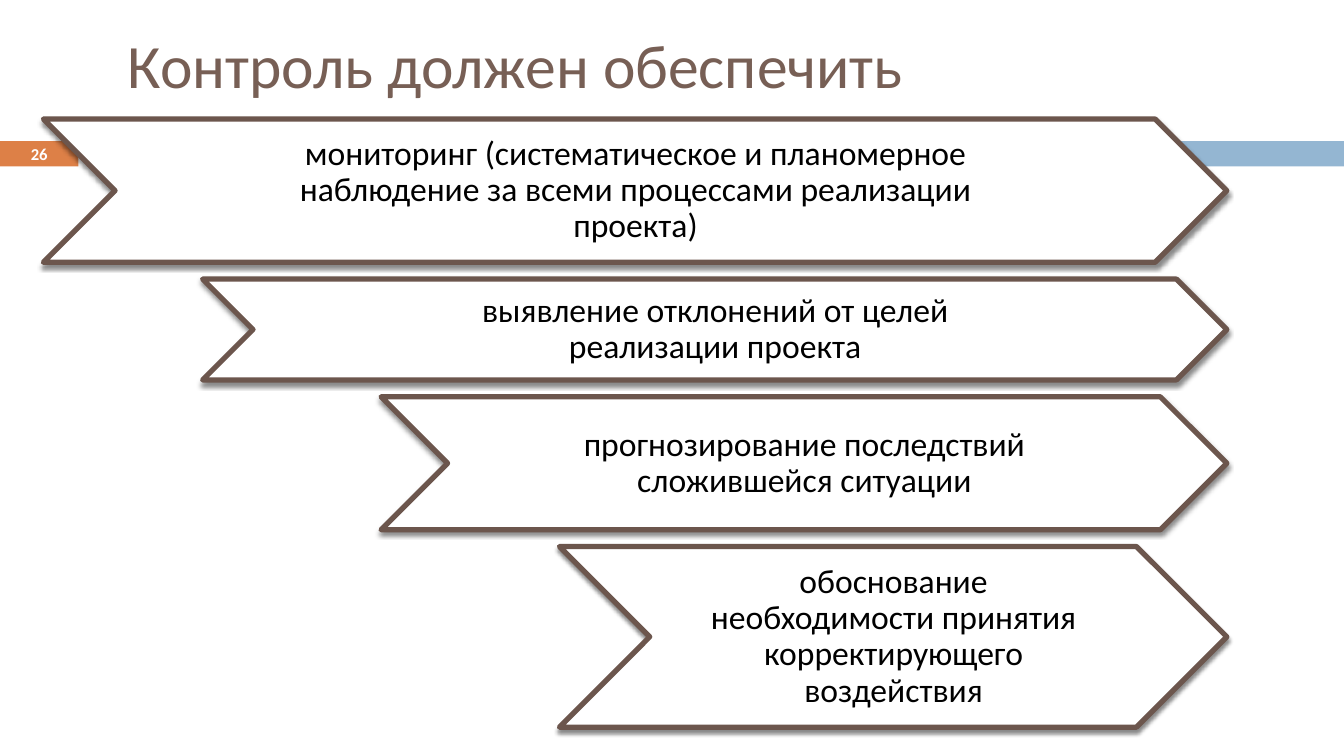
from dataclasses import dataclass
from lxml.etree import SubElement
from pptx import Presentation
from pptx.dml.color import RGBColor
from pptx.enum.shapes import MSO_SHAPE
from pptx.enum.text import MSO_ANCHOR, MSO_AUTO_SIZE, PP_ALIGN
from pptx.oxml.ns import qn
from pptx.shapes.autoshape import Shape
from pptx.slide import Slide
from pptx.text.text import TextFrame
from pptx.util import Pt


@dataclass(frozen=True)
class Theme:
    font: str = "Calibri"
    title: float = 44
    body: float = 24
    small: float = 11.9
    white: str = "FFFFFF"
    black: str = "000000"
    brown: str = "775F55"
    edge: str = "6C564D"
    orange: str = "DD8047"
    blue: str = "94B6D2"


@dataclass(frozen=True)
class Box:
    left: float
    top: float
    width: float
    height: float


@dataclass(frozen=True)
class Step:
    left: float
    height: float
    text: str


THEME = Theme()
WIDTH, HEIGHT = 960, 540
TOP, GAP, RIGHT = 85, 12, 876.3
INSET = 0.2
BANDS = [
    (Box(0, 100.8, 56, 18), THEME.orange),
    (Box(62, 100.8, WIDTH - 62, 18), THEME.blue),
]
STEPS = [
    Step(31, 102.4, "мониторинг (систематическое и планомерное наблюдение "
         "за всеми процессами реализации проекта)"),
    Step(144.7, 72, "выявление отклонений от целей реализации проекта"),
    Step(272.2, 95, "прогнозирование последствий сложившейся ситуации"),
    Step(399.6, 129, "обоснование необходимости принятия "
         "корректирующего воздействия"),
]


def place(shape: Shape, box: Box) -> None:
    shape.left, shape.top = Pt(box.left), Pt(box.top)
    shape.width, shape.height = Pt(box.width), Pt(box.height)


def write(frame: TextFrame, text: str, size: float, color: str,
          align: PP_ALIGN = PP_ALIGN.CENTER, bold: bool = False) -> None:
    frame.text = text
    frame.word_wrap = True
    frame.auto_size = MSO_AUTO_SIZE.NONE
    frame.vertical_anchor = MSO_ANCHOR.MIDDLE
    para = frame.paragraphs[0]
    para.alignment = align
    font = para.font
    font.name, font.size, font.bold = THEME.font, Pt(size), bold
    font.color.rgb = RGBColor.from_string(color)


def draw(slide: Slide, kind: MSO_SHAPE, box: Box, fill: str) -> Shape:
    shape = slide.shapes.add_shape(
        kind, Pt(box.left), Pt(box.top), Pt(box.width), Pt(box.height))
    shape.shadow.inherit = False
    shape.fill.solid()
    shape.fill.fore_color.rgb = RGBColor.from_string(fill)
    shape.line.fill.background()
    return shape


def label(slide: Slide, box: Box) -> TextFrame:
    return slide.shapes.add_textbox(
        Pt(box.left), Pt(box.top), Pt(box.width), Pt(box.height)).text_frame


def shade(shape: Shape) -> None:
    effect = shape.element.spPr.find(qn("a:effectLst"))
    outer = SubElement(effect, qn("a:outerShdw"), blurRad=str(Pt(3)),
                       dist=str(Pt(2.4)), dir="5400000", rotWithShape="0")
    color = SubElement(outer, qn("a:srgbClr"), val=THEME.black)
    SubElement(color, qn("a:alpha"), val="45000")


def arrow(slide: Slide, step: Step, top: float) -> None:
    width = RIGHT - step.left
    shape = draw(slide, MSO_SHAPE.CHEVRON,
                 Box(step.left, top, width, step.height), THEME.white)
    shape.line.color.rgb = RGBColor.from_string(THEME.edge)
    shape.line.width = Pt(3.75)
    SubElement(shape.line.fill._xPr, qn("a:round"))
    shade(shape)
    frame = label(slide, Box(step.left + INSET * width, top,
                             (1 - 2 * INSET) * width, step.height))
    frame.margin_left = frame.margin_top = frame.margin_bottom = Pt(0.7)
    frame.margin_right = 0
    write(frame, step.text, THEME.body, THEME.black)
    frame.paragraphs[0].line_spacing = 0.9


def main() -> None:
    deck = Presentation()
    deck.slide_width, deck.slide_height = Pt(WIDTH), Pt(HEIGHT)
    slide = deck.slides.add_slide(deck.slide_layouts[5])
    for box, fill in BANDS:
        draw(slide, MSO_SHAPE.RECTANGLE, box, fill)
    title = slide.shapes.title
    place(title, Box(84, 11.5, 792, 68.4))
    write(title.text_frame, "Контроль должен обеспечить", THEME.title,
          THEME.brown, PP_ALIGN.LEFT)
    write(label(slide, Box(0, 100, 56, 19.5)), "26", THEME.small,
          THEME.white, bold=True)
    top = TOP
    for step in STEPS:
        arrow(slide, step, top)
        top += step.height + GAP
    deck.save("out.pptx")


if __name__ == "__main__":
    main()
